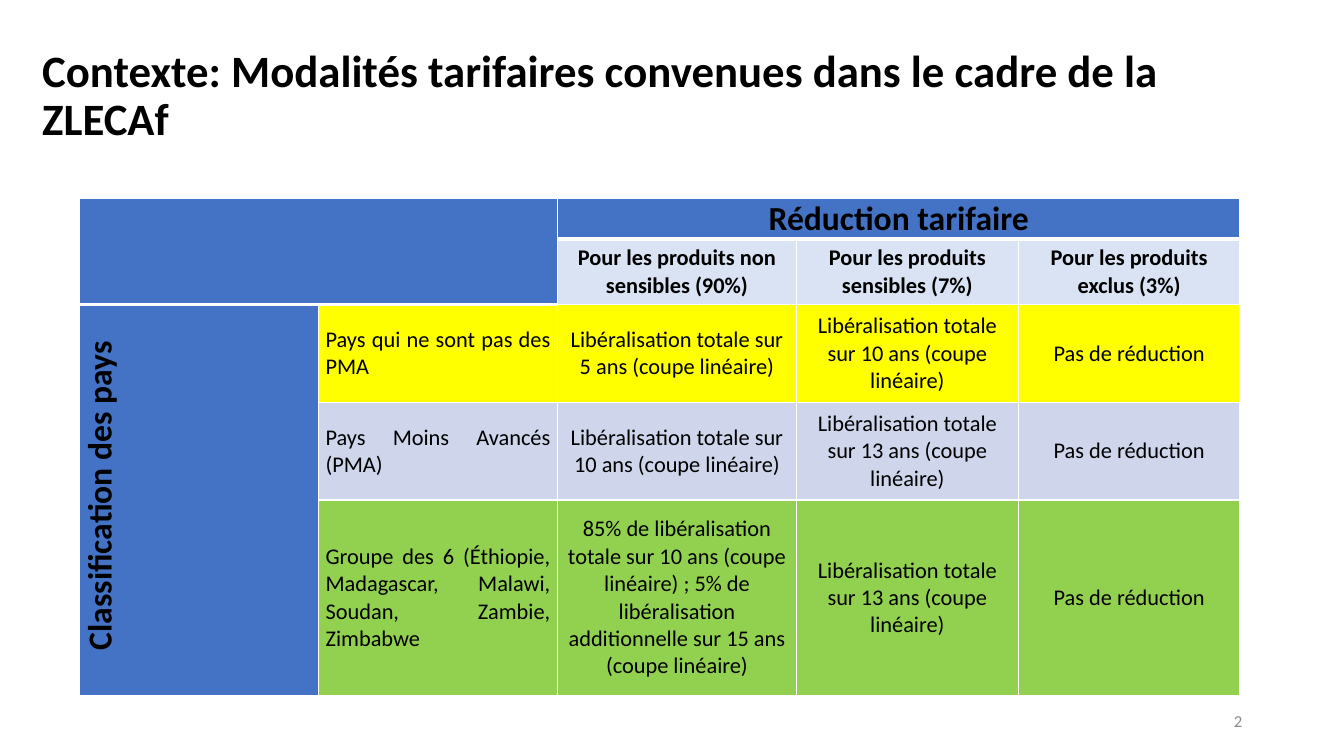
import lxml.etree
import pptx
import pptx.dml.color
import pptx.enum.text
import pptx.oxml.ns
import pptx.util

ALIGN = pptx.enum.text.PP_ALIGN
MIDDLE = pptx.enum.text.MSO_ANCHOR.MIDDLE
EMU_PER_PX = 9144

BLUE, PALE_BLUE = "4472C4", "DAE3F3"
NO_CUT = "Pas de réduction"
COLUMN_WIDTHS = [237, 237, 237, 220, 220]
ROW_HEIGHTS = [32, 65, 97, 97, 194]
PRODUCT_GROUPS = [
    "Pour les produits non sensibles (90%)",
    "Pour les produits sensibles (7%)",
    "Pour les produits exclus (3%)",
]
COUNTRY_GROUPS = [
    ("FFFF00", "Pays qui ne sont pas des PMA",
     "Libéralisation totale sur 5 ans (coupe linéaire)",
     "Libéralisation totale sur 10 ans (coupe linéaire)"),
    ("CFD5EA", "Pays Moins Avancés (PMA)",
     "Libéralisation totale sur 10 ans (coupe linéaire)",
     "Libéralisation totale sur 13 ans (coupe linéaire)"),
    ("92D050", "Groupe des 6 (Éthiopie, Madagascar, Malawi, Soudan, Zambie, Zimbabwe",
     "85% de libéralisation totale sur 10 ans (coupe linéaire) ; "
     "5% de libéralisation additionnelle sur 15 ans (coupe linéaire)",
     "Libéralisation totale sur 13 ans (coupe linéaire)"),
]


def px(n):
    return pptx.util.Emu(n * EMU_PER_PX)


def rgb(color):
    return pptx.dml.color.RGBColor.from_string(color)


class SlideBuilder:
    font = "Calibri"
    ink = "000000"
    rule = "FFFFFF"

    def __init__(self, slide):
        self.slide = slide

    def add_run(self, p, text, size, bold=False, color=None, align=ALIGN.LEFT):
        p.alignment = align
        r = p.add_run()
        r.text = text
        r.font.name = self.font
        r.font.size = pptx.util.Pt(size)
        r.font.bold = bold
        r.font.color.rgb = rgb(color or self.ink)

    def text(self, left, top, width, height, text, size, line_spacing=1.0, **style):
        sp = self.slide.shapes.add_textbox(px(left), px(top), px(width), px(height))
        tf = sp.text_frame
        tf.word_wrap = True
        tf.vertical_anchor = MIDDLE
        p = tf.paragraphs[0]
        p.line_spacing = line_spacing
        self.add_run(p, text, size, **style)

    def table(self, left, top, column_widths, row_heights):
        frame = self.slide.shapes.add_table(
            len(row_heights), len(column_widths), px(left), px(top),
            px(sum(column_widths)), px(sum(row_heights)))
        table = frame.table
        table.first_row = table.horz_banding = False
        for column, width in zip(table.columns, column_widths):
            column.width = px(width)
        for row, height in zip(table.rows, row_heights):
            row.height = px(height)
        return table

    def borders(self, cell, bottom):
        """Rule all four sides at 1 pt, except the bottom one."""
        tcPr = cell._tc.get_or_add_tcPr()
        for side, width in (("L", 1), ("R", 1), ("T", 1), ("B", bottom)):
            ln = lxml.etree.SubElement(tcPr, pptx.oxml.ns.qn("a:ln" + side),
                                       w=str(pptx.util.Pt(width)))
            fill = lxml.etree.SubElement(ln, pptx.oxml.ns.qn("a:solidFill"))
            lxml.etree.SubElement(fill, pptx.oxml.ns.qn("a:srgbClr"), val=self.rule)

    def cell(self, cell, fill, bottom=1):
        self.borders(cell, bottom)
        cell.fill.solid()
        cell.fill.fore_color.rgb = rgb(fill)
        cell.vertical_anchor = MIDDLE
        cell.margin_left = cell.margin_right = px(7)
        cell.margin_top = cell.margin_bottom = 0

    def cell_text(self, cell, text, size=16, before=3, after=3,
                  align=ALIGN.CENTER, bold=False):
        p = cell.text_frame.paragraphs[0]
        p.space_before = pptx.util.Pt(before)
        p.space_after = pptx.util.Pt(after)
        self.add_run(p, text, size, bold=bold, align=align)

    def heading(self, cell, text, size):
        self.cell_text(cell, text, size, before=6, after=0, bold=True)

    def vertical_heading(self, cell, text, size):
        self.heading(cell, text, size)
        cell._tc.get_or_add_tcPr().set("vert", "vert270")
        cell.text_frame.paragraphs[0]._p.get_or_add_pPr().set("marL", str(px(8)))


def add_tariff_table(builder):
    table = builder.table(79, 197, COLUMN_WIDTHS, ROW_HEIGHTS)
    row_fills = [BLUE, PALE_BLUE] + [group[0] for group in COUNTRY_GROUPS]
    for i, row_fill in enumerate(row_fills):
        for j in range(len(COLUMN_WIDTHS)):
            in_corner = i < 2 and j < 2
            fill = BLUE if in_corner or j == 0 else row_fill
            bottom = 3 if in_corner or i == 0 else 1
            builder.cell(table.cell(i, j), fill, bottom)

    table.cell(0, 0).merge(table.cell(1, 1))
    table.cell(0, 2).merge(table.cell(0, 4))
    table.cell(2, 0).merge(table.cell(4, 0))

    builder.heading(table.cell(0, 2), "Réduction tarifaire", 24)
    builder.vertical_heading(table.cell(2, 0), "Classification des pays", 24)
    for j, products in enumerate(PRODUCT_GROUPS, start=2):
        builder.heading(table.cell(1, j), products, 16)
    for i, (_, countries, *cuts) in enumerate(COUNTRY_GROUPS, start=2):
        builder.cell_text(table.cell(i, 1), countries, align=ALIGN.JUSTIFY)
        for j, cut in enumerate(cuts + [NO_CUT], start=2):
            builder.cell_text(table.cell(i, j), cut)


def main():
    prs = pptx.Presentation()
    prs.slide_width, prs.slide_height = px(1333), px(750)
    builder = SlideBuilder(prs.slides.add_slide(prs.slide_layouts[6]))
    builder.text(32, 40, 1262, 112,
                 "Contexte: Modalités tarifaires convenues dans le cadre de la ZLECAf",
                 32, line_spacing=0.9, bold=True)
    add_tariff_table(builder)
    builder.text(942, 695, 300, 40, "2", 12, color="8C8C8C", align=ALIGN.RIGHT)
    prs.save("out.pptx")


if __name__ == "__main__":
    main()
